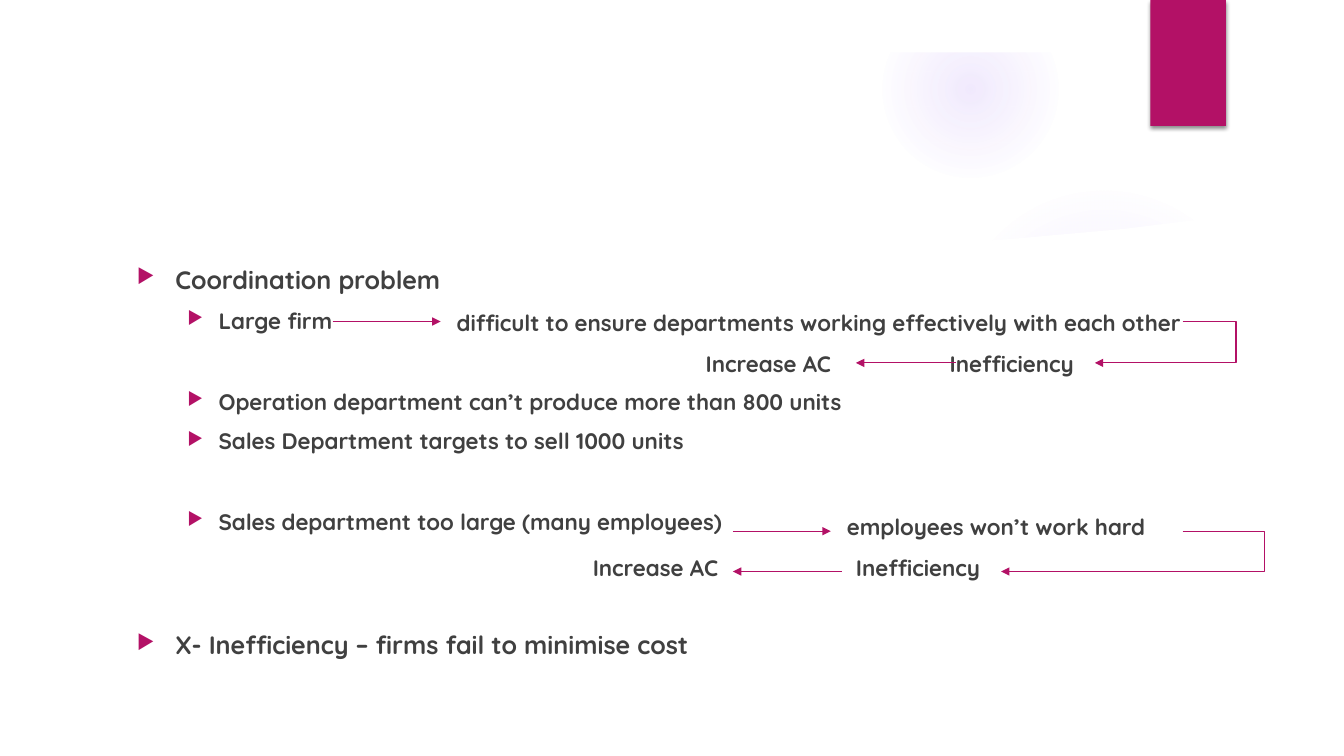
from lxml.etree import SubElement
from pptx import Presentation
from pptx.dml.color import RGBColor
from pptx.enum.shapes import MSO_CONNECTOR, MSO_SHAPE
from pptx.enum.text import MSO_ANCHOR
from pptx.oxml import parse_xml
from pptx.oxml.ns import nsdecls, qn
from pptx.util import Inches, Pt

THEME = {
    "font": "Quicksand", "text": "404040", "accent": "B31166",
    "glow": "9B6BF2", "paper": "FFFFFF",
    "sizes": (18, 16), "gap": 9.2, "leading": 1.25,
}

# Bulleted lines: level, empty rows above, text
BULLETS = [
    (0, 0, "Coordination problem"),
    (1, 0, "Large firm"),
    (1, 1, "Operation department can’t produce more than 800 units"),
    (1, 0, "Sales Department targets to sell 1000 units"),
    (1, 1, "Sales department too large (many employees)"),
    (0, 2, "X- Inefficiency – firms fail to minimise cost"),
]
INDENTS = ((0.38, 0.38), (0.81, 0.31))  # left margin, hanging

# Consequences beside the bullets: row below the heading, left, width, text
LABELS = [
    (0, 4.53, 7.4, "difficult to ensure departments working effectively with each other"),
    (1, 7.0, 1.4, "Increase AC"),
    (1, 9.42, 1.4, "Inefficiency"),
    (5, 8.4, 3.2, "employees won’t work hard"),
    (6, 5.88, 1.4, "Increase AC"),
    (6, 8.49, 1.4, "Inefficiency"),
]

# Arrows: start, end, x of the turn (None when straight)
ARROWS = [
    ((3.3, 3.19), (4.37, 3.19), None),
    ((11.73, 3.19), (10.86, 3.6), 12.26),
    ((9.48, 3.6), (8.49, 3.6), None),
    ((7.27, 5.27), (8.24, 5.27), None),
    ((11.73, 5.27), (9.93, 5.67), 12.54),
    ((8.35, 5.67), (7.27, 5.67), None),
]

# Glows: left, top, diameter, stops (position %, opacity %)
GLOWS = [
    (9.41, 1.83, 3.08, ((0, 7), (36, 6), (69, 0))),
    (8.75, 0.01, 1.75, ((0, 14), (36, 7), (73, 0))),
]
PANEL = [
    (0.5, 2.04), (0.5, 7), (12.84, 7), (12.84, 2.04), (12.28, 2.13),
    (11.72, 2.2), (11.16, 2.27), (10.6, 2.32), (10.04, 2.37), (9.49, 2.41),
    (8.94, 2.44), (8.4, 2.46), (7.6, 2.47), (6.82, 2.48), (5.83, 2.46),
    (4.88, 2.43), (4.01, 2.38), (3.21, 2.33), (2.49, 2.27), (1.59, 2.18),
    (0.94, 2.1),
]
BODY = (1.26, 2.57, 11.89, 4.43)
INSET_TOP = 0.05


def style(shape, color):
    shape.shadow.inherit = False
    shape.fill.solid()
    shape.fill.fore_color.rgb = RGBColor.from_string(color)
    shape.line.fill.background()


def add_run(p, text, level):
    r = p.add_run()
    r.text = text
    r.font.name = THEME["font"]
    r.font.size = Pt(THEME["sizes"][level])
    r.font.bold = True
    r.font.color.rgb = RGBColor.from_string(THEME["text"])


def add_bullet(p, level):
    margin, hang = INDENTS[level]
    pPr = p._p.get_or_add_pPr()
    pPr.set("marL", str(Inches(margin)))
    pPr.set("indent", str(-Inches(hang)))
    color = SubElement(pPr, qn("a:buClr"))
    SubElement(color, qn("a:srgbClr"), val=THEME["accent"])
    SubElement(pPr, qn("a:buSzPct"), val="80000")
    SubElement(pPr, qn("a:buChar"), char="▶")


def add_glow(s, left, top, size, stops):
    glow = s.shapes.add_shape(MSO_SHAPE.OVAL, Inches(left), Inches(top),
                              Inches(size), Inches(size))
    style(glow, THEME["glow"])
    gs = "".join(
        f'<a:gs pos="{pos * 1000}"><a:srgbClr val="{THEME["glow"]}">'
        f'<a:alpha val="{alpha * 1000}"/></a:srgbClr></a:gs>' for pos, alpha in stops)
    grad = parse_xml(
        f'<a:gradFill {nsdecls("a")}><a:gsLst>{gs}</a:gsLst><a:path path="circle">'
        '<a:fillToRect l="50000" t="50000" r="50000" b="50000"/></a:path></a:gradFill>')
    spPr = glow._element.spPr
    spPr.replace(spPr.find(qn("a:solidFill")), grad)


def add_arrow(s, start, end, turn):
    kind = MSO_CONNECTOR.STRAIGHT if turn is None else MSO_CONNECTOR.ELBOW
    c = s.shapes.add_connector(kind, *(Inches(v) for v in start + end))
    c.line.color.rgb = RGBColor.from_string(THEME["accent"])
    c.line.width = Pt(0.75)
    spPr = c._element.spPr
    SubElement(spPr.find(qn("a:ln")), qn("a:tailEnd"), type="triangle")
    SubElement(spPr, qn("a:effectLst"))
    if turn is not None:
        ratio = (turn - start[0]) / (end[0] - start[0])
        guides = spPr.find(qn("a:prstGeom")).get_or_add_avLst()
        SubElement(guides, qn("a:gd"), name="adj1", fmla=f"val {round(ratio * 100000)}")


def main():
    prs = Presentation()
    prs.slide_width, prs.slide_height = Inches(13.33), Inches(7.5)
    s = prs.slides.add_slide(prs.slide_layouts[6])

    # Background glows, covered below by the panel and above by a strip
    for glow in GLOWS:
        add_glow(s, *glow)
    outline = s.shapes.build_freeform(*(Inches(v) for v in PANEL[0]), scale=1.0)
    outline.add_line_segments([(Inches(x), Inches(y)) for x, y in PANEL[1:]], close=True)
    style(outline.convert_to_shape(), THEME["paper"])
    strip = s.shapes.add_shape(MSO_SHAPE.RECTANGLE, 0, 0, prs.slide_width, Inches(0.52))
    style(strip, THEME["paper"])

    # Accent tab
    tab = s.shapes.add_shape(MSO_SHAPE.RECTANGLE, Inches(11.41), 0, Inches(0.75), Inches(1.25))
    style(tab, THEME["accent"])
    effects = tab._element.spPr.find(qn("a:effectLst"))
    shadow = SubElement(effects, qn("a:outerShdw"), blurRad=str(Pt(3)), dist=str(Pt(2)),
                        dir="5400000", rotWithShape="0")
    color = SubElement(shadow, qn("a:srgbClr"), val="000000")
    SubElement(color, qn("a:alpha"), val="45000")

    # Bulleted text
    heading, line = (size * THEME["leading"] for size in THEME["sizes"])
    pitch = line + THEME["gap"]
    tf = s.shapes.add_textbox(*(Inches(v) for v in BODY)).text_frame
    tf.word_wrap = True
    for i, (level, skipped, text) in enumerate(BULLETS):
        p = tf.paragraphs[0] if i == 0 else tf.add_paragraph()
        p.level = level
        p.space_before = Pt(THEME["gap"] + skipped * pitch if i else 0)
        add_bullet(p, level)
        add_run(p, text, 1 if level else 0)

    # Consequence labels on the same row grid
    first_row = BODY[1] + INSET_TOP + (heading + THEME["gap"]) / 72
    for row, left, width, text in LABELS:
        top = first_row + row * pitch / 72
        box = s.shapes.add_textbox(Inches(left), Inches(top), Inches(width), Inches(line / 72))
        tf = box.text_frame
        tf.word_wrap = True
        tf.vertical_anchor = MSO_ANCHOR.MIDDLE
        tf.margin_left = tf.margin_right = tf.margin_top = tf.margin_bottom = 0
        add_run(tf.paragraphs[0], text, 1)

    # Arrows of cause and effect
    for arrow in ARROWS:
        add_arrow(s, *arrow)

    prs.save("out.pptx")


if __name__ == "__main__":
    main()
